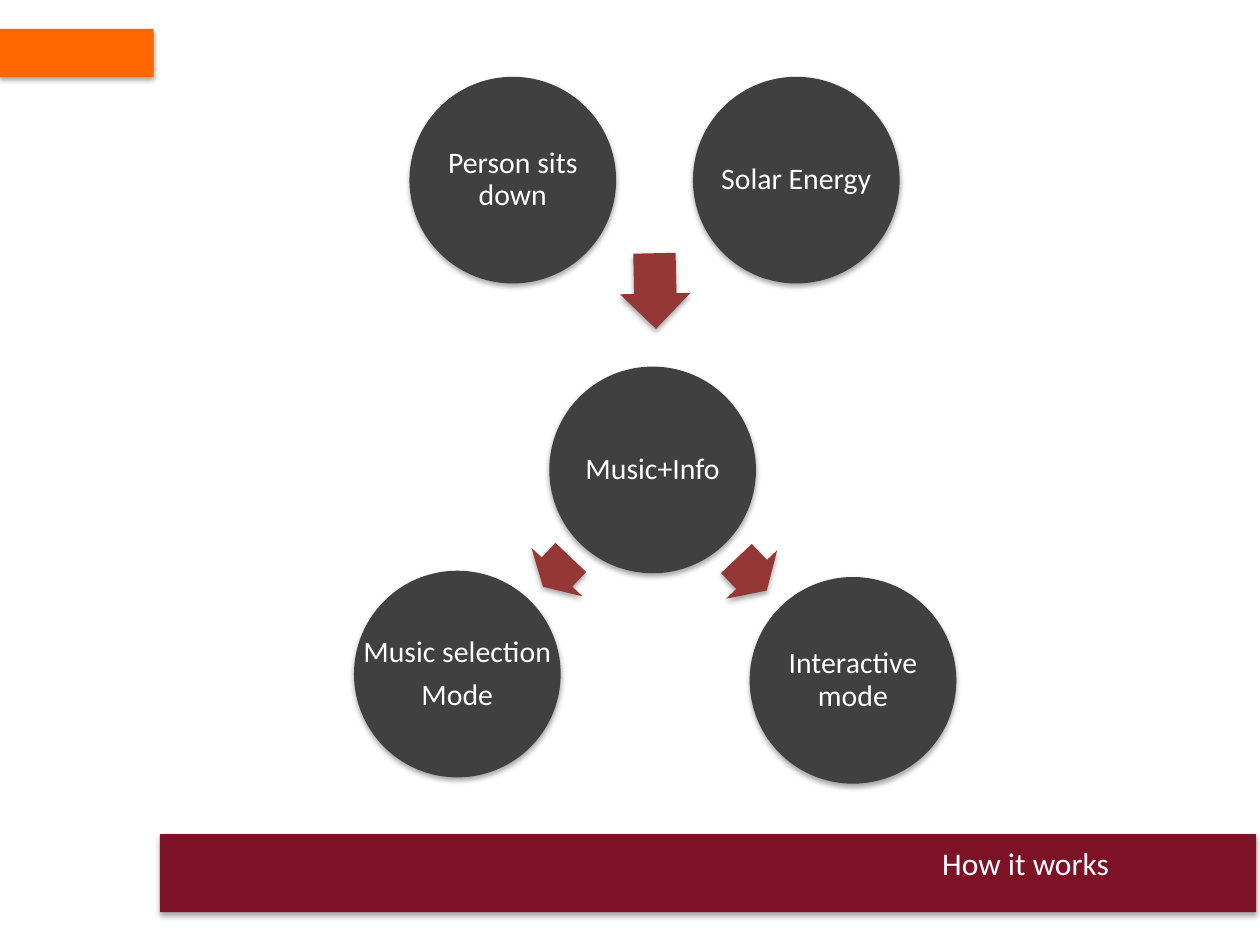
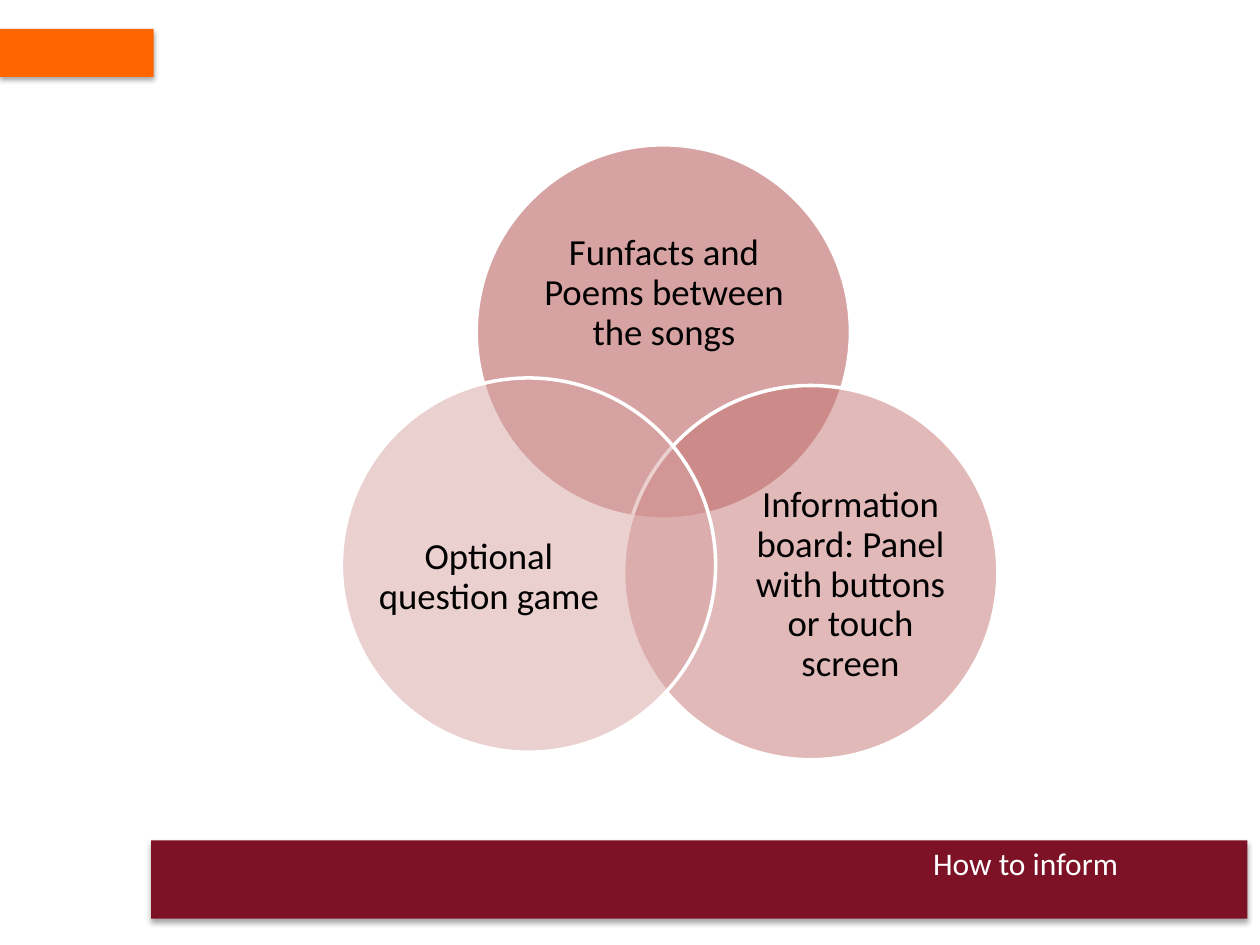
from lxml.etree import SubElement
from pptx import Presentation
from pptx.dml.color import RGBColor
from pptx.enum.shapes import MSO_SHAPE
from pptx.enum.text import MSO_ANCHOR, PP_ALIGN
from pptx.oxml.ns import qn
from pptx.util import Inches, Pt

FONT = "Calibri"
WHITE, BLACK = "FFFFFF", "000000"
ORANGE, BURGUNDY = "FF6600", "7D1126"
CHARCOAL, BRICK = "404040", "953735"

rgb = RGBColor.from_string


def draw(s, kind, box, color, opacity=None, outline=None, shadow=True):
    """Add a filled preset shape; box is left, top, width, height in inches."""
    sp = s.shapes.add_shape(kind, *[Inches(v) for v in box])
    sp.fill.solid()
    sp.fill.fore_color.rgb = rgb(color)
    if opacity:
        clr = sp._element.spPr.find(qn("a:solidFill")).find(qn("a:srgbClr"))
        SubElement(clr, qn("a:alpha"), val=str(opacity * 1000))
    if outline:
        sp.line.color.rgb = rgb(outline)
        sp.line.width = Pt(2)
    else:
        sp.line.fill.background()
    sp.shadow.inherit = False
    if shadow:
        effects = sp._element.spPr.find(qn("a:effectLst"))
        outer = SubElement(effects, qn("a:outerShdw"), blurRad=str(Pt(3.1)),
                           dist=str(Pt(1.8)), dir="5400000", rotWithShape="0")
        clr = SubElement(outer, qn("a:srgbClr"), val=BLACK)
        SubElement(clr, qn("a:alpha"), val="35000")
    return sp


def write(sp, text, size=18, color=WHITE, inset=None, spacing=None,
          anchor=MSO_ANCHOR.MIDDLE, wrap=True):
    """Fill a shape with centred text, one paragraph per line."""
    tf = sp.text_frame
    tf.word_wrap = wrap
    tf.vertical_anchor = anchor
    if inset is not None:
        tf.margin_left = tf.margin_right = Inches(inset)
        tf.margin_top = tf.margin_bottom = Inches(inset)
    for i, line in enumerate(text.split("\n")):
        p = tf.add_paragraph() if i else tf.paragraphs[0]
        p.alignment = PP_ALIGN.CENTER
        if spacing:
            p.line_spacing = spacing
            p.space_after = Pt(6)
        r = p.add_run()
        r.text = line
        r.font.name = FONT
        r.font.size = Pt(size)
        r.font.color.rgb = rgb(color)


prs = Presentation()
prs.slide_width, prs.slide_height = Inches(10), Inches(7.5)

# Shared frame: orange tab, bottom band and its title
slides = []
for title, band_left, band_top in [("How it works", 1.27, 6.62),
                                   ("How to inform", 1.2, 6.67)]:
    s = prs.slides.add_slide(prs.slide_layouts[6])
    draw(s, MSO_SHAPE.RECTANGLE, (0, 0.23, 1.22, 0.38), ORANGE)
    draw(s, MSO_SHAPE.RECTANGLE, (band_left, band_top, 8.7, 0.62), BURGUNDY)
    tb = s.shapes.add_textbox(Inches(5.97), Inches(6.65), Inches(4.34), Inches(0.4))
    write(tb, title, anchor=MSO_ANCHOR.TOP)
    slides.append(s)
works, inform = slides

# How it works: steps
STEP = 1.64
for text, left, top, wrap in [
    ("Music+Info", 4.36, 2.91, False),
    ("Solar Energy", 5.5, 0.61, False),
    ("Interactive mode", 5.95, 4.58, True),
    ("Music selection\nMode", 2.81, 4.53, False),
    ("Person sits down", 3.25, 0.61, True),
]:
    sp = draw(works, MSO_SHAPE.OVAL, (left, top, STEP, STEP), CHARCOAL)
    write(sp, text, size=17, inset=0.02, spacing=0.9, wrap=wrap)

# How it works: arrows between the steps
for left, top, length, angle in [(4.9, 2.03, 0.6, 88.8),
                                 (5.79, 4.28, 0.35, 46.5),
                                 (4.26, 4.26, 0.32, 133.6)]:
    sp = draw(works, MSO_SHAPE.RIGHT_ARROW, (left, top, length, 0.56), BRICK)
    sp.adjustments[0], sp.adjustments[1] = 0.6, 0.5
    sp.rotation = angle

# How to inform: overlapping circles, each with its label
CIRCLE = 2.97
for text, left, top, color, label in [
    ("Funfacts and Poems between the songs", 3.78, 1.15, "AE4946",
     (4.18, 1.66, 2.18, 1.34)),
    ("Information board: Panel with buttons or touch screen", 4.95, 3.06, "C47472",
     (5.86, 3.83, 1.78, 1.63)),
    ("Optional question game", 2.71, 3, "D6A2A1",
     (2.99, 3.77, 1.78, 1.63)),
]:
    draw(inform, MSO_SHAPE.OVAL, (left, top, CIRCLE, CIRCLE), color,
         opacity=50, outline=WHITE, shadow=False)
    tb = inform.shapes.add_textbox(*[Inches(v) for v in label])
    write(tb, text, size=21, color=BLACK, inset=0, spacing=0.9)

prs.save("out.pptx")
